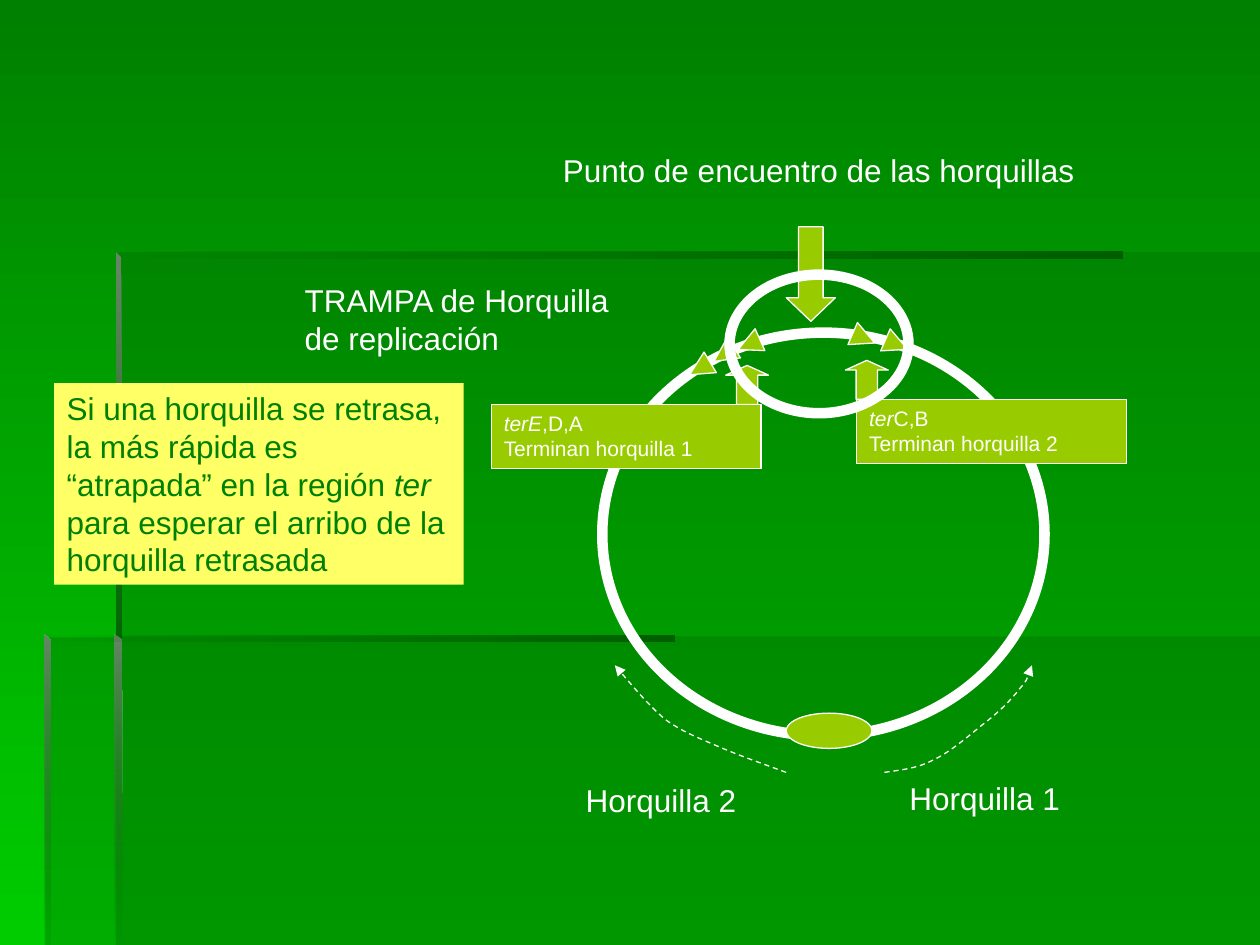
from lxml import etree
from pptx import Presentation
from pptx.dml.color import RGBColor
from pptx.enum.dml import MSO_LINE
from pptx.enum.shapes import MSO_SHAPE as Preset
from pptx.enum.text import MSO_ANCHOR, MSO_AUTO_SIZE as AutoSize, PP_ALIGN
from pptx.oxml.ns import qn
from pptx.util import Inches, Pt

DARK_GREEN = RGBColor(0x00, 0x80, 0x00)
BRIGHT_GREEN = RGBColor(0x00, 0xCC, 0x00)
PANEL = RGBColor(0x00, 0x66, 0x00)
PANEL_SHADE = RGBColor(0x00, 0x5E, 0x00)
PANEL_LIGHT = RGBColor(0x66, 0x86, 0x66)
LIME = RGBColor(0x99, 0xCC, 0x00)
YELLOW = RGBColor(0xFF, 0xFF, 0x66)
WHITE = RGBColor(0xFF, 0xFF, 0xFF)

prs = Presentation()
prs.slide_width, prs.slide_height = Inches(10), Inches(7.5)
slide = prs.slides.add_slide(prs.slide_layouts[6])
shapes = slide.shapes


def add_preset(preset, box, fill=LIME, line_width=0.75, rotation=0):
    shape = shapes.add_shape(preset, *map(Inches, box))
    shape.shadow.inherit = False
    shape.rotation = rotation
    if fill is None:
        shape.fill.background()
    else:
        shape.fill.solid()
        shape.fill.fore_color.rgb = fill
    if line_width:
        shape.line.color.rgb = WHITE
        shape.line.width = Pt(line_width)
    else:
        shape.line.fill.background()
    return shape


def write(shape, paragraphs, size=18, color=WHITE, wrap=True):
    """Each paragraph is a list of runs; a run starting with "ter" is italic."""
    frame = shape.text_frame
    frame_format = {"word_wrap": wrap, "auto_size": AutoSize.SHAPE_TO_FIT_TEXT,
                    "vertical_anchor": MSO_ANCHOR.TOP}
    for name, value in frame_format.items():
        setattr(frame, name, value)
    for index, runs in enumerate(paragraphs):
        paragraph = frame.add_paragraph() if index else frame.paragraphs[0]
        paragraph.alignment = PP_ALIGN.LEFT
        for text in runs:
            run = paragraph.add_run()
            run.text = text
            run_format = {"name": "Arial", "size": Pt(size), "italic": text.startswith("ter")}
            for name, value in run_format.items():
                setattr(run.font, name, value)
            run.font.color.rgb = color


# Background gradient, dark at the top
backdrop = slide.background.fill
backdrop.gradient()
backdrop.gradient_angle = 270
for stop, color in zip(backdrop.gradient_stops, (DARK_GREEN, BRIGHT_GREEN)):
    stop.color.rgb = color

# Translucent panels and their bevelled edges: outline, angle, (colour, opacity) stops
PANEL_FILL = [(PANEL, 30)]
ACROSS = [(PANEL, 0), (PANEL_SHADE, 100)]
decor = [
    ([(0.92, 5.05), (0.92, 7.5), (10, 7.5), (10, 5.05)], 0, PANEL_FILL),
    ([(0.94, 5.06), (0.36, 5.06), (0.36, 7.5), (10, 7.5), (10, 2), (0.94, 2)], 0, PANEL_FILL),
    ([(0.92, 2), (0.92, 2.05), (8.91, 2.05), (8.91, 2)], 0, ACROSS),
    ([(0.92, 2), (0.92, 5.1), (0.97, 5.1), (0.96, 2.04)], 270,
     [(PANEL_LIGHT, 100), (PANEL, 100)]),
    ([(0.91, 7.5), (0.97, 7.5), (0.96, 5.08), (0.91, 5.04)], 270,
     [(PANEL_LIGHT, 100), (PANEL, 0)]),
    ([(0.35, 5.04), (0.35, 5.09), (5.35, 5.09), (5.35, 5.04)], 0, ACROSS),
    ([(0.35, 5.04), (0.35, 7.5), (0.4, 7.5), (0.4, 5.09)], 270,
     [(PANEL_LIGHT, 100), (PANEL, 10)]),
]
for outline, angle, stops in decor:
    corners = [(Inches(x), Inches(y)) for x, y in outline]
    builder = shapes.build_freeform(*corners[0])
    builder.add_line_segments(corners[1:], close=True)
    panel = builder.convert_to_shape()
    panel.shadow.inherit = False
    panel.line.fill.background()
    if len(stops) == 1:
        panel.fill.solid()
        panel.fill.fore_color.rgb = stops[0][0]
    else:
        panel.fill.gradient()
        panel.fill.gradient_angle = angle
        for stop, (color, _) in zip(panel.fill.gradient_stops, stops):
            stop.color.rgb = color
    for tint, (_, opacity) in zip(panel._element.spPr.iter(qn("a:srgbClr")), stops):
        if opacity < 100:
            etree.SubElement(tint, qn("a:alpha"), val=str(opacity * 1000))

# Chromosome and replication origin
add_preset(Preset.OVAL, (4.78, 2.64, 3.51, 3.2), fill=None, line_width=6)
add_preset(Preset.OVAL, (6.24, 5.66, 0.68, 0.28))

# Dashed fork paths: start point, then two controls and an end per curve
fork_paths = [
    [(6.24, 6.13), (6.05, 6.06), (5.85, 5.99), (5.69, 5.92), (5.53, 5.85),
     (5.42, 5.81), (5.28, 5.71), (5.15, 5.6), (4.94, 5.35), (4.88, 5.28)],
    [(7.02, 6.13), (7.15, 6.11), (7.28, 6.1), (7.41, 6.03), (7.54, 5.97),
     (7.69, 5.84), (7.8, 5.75), (7.92, 5.66), (8.03, 5.55), (8.09, 5.47),
     (8.16, 5.39), (8.17, 5.33), (8.19, 5.28)],
]
for fork_path in fork_paths:
    points = [(Inches(x), Inches(y)) for x, y in fork_path]
    builder = shapes.build_freeform(*points[0])
    builder.add_line_segments(points[1:], close=False)
    fork = builder.convert_to_shape()
    fork.shadow.inherit = False
    fork.fill.background()
    fork.line.color.rgb = WHITE
    fork.line.width = Pt(0.75)
    fork.line.dash_style = MSO_LINE.DASH
    etree.SubElement(fork.line._get_or_add_ln(), qn("a:tailEnd"), type="triangle")
    # Join every three straight segments into one Bézier curve
    segments = list(fork._element.spPr.iter(qn("a:lnTo")))
    for first in range(0, len(segments), 3):
        curve = etree.Element(qn("a:cubicBezTo"))
        segments[first].addprevious(curve)
        for segment in segments[first:first + 3]:
            curve.append(segment[0])
            segment.getparent().remove(segment)

# Free labels
labels = [
    ("Horquilla 2", (4.55, 6.15, 1.4, 0.4), False),
    ("Horquilla 1", (7.12, 6.13, 1.4, 0.4), False),
    ("Punto de encuentro de las horquillas", (4.37, 1.15, 4.26, 0.4), False),
    ("TRAMPA de Horquilla de replicación", (2.32, 2.18, 2.91, 0.7), True),
]
for text, box, wrap in labels:
    write(shapes.add_textbox(*map(Inches, box)), [[text]], wrap=wrap)

# Ter sites along the chromosome
for left, top, rotation in [(5.85, 2.64, 245.9), (5.65, 2.72, 235.9), (5.46, 2.83, 239),
                            (6.76, 2.59, 113.2), (7.02, 2.64, 113.2)]:
    add_preset(Preset.ISOSCELES_TRIANGLE, (left, top, 0.19, 0.19), rotation=rotation)

# Ter boxes, each with its arrow
ter_sites = [
    ((6.71, 2.86), (6.8, 3.17), ["ter", "C,B"], "Terminan horquilla 2"),
    ((5.76, 2.9), (3.9, 3.21), ["terE", ",D,A"], "Terminan horquilla 1"),
]
for arrow_at, box_at, genes, effect in ter_sites:
    arrow = add_preset(Preset.UP_ARROW, (*arrow_at, 0.34, 0.31))
    arrow.adjustments[1] = 0.25
    write(add_preset(Preset.RECTANGLE, (*box_at, 2.14, 0.51)), [genes, [effect]], size=12)

# Meeting point and fork trap
meeting_arrow = add_preset(Preset.DOWN_ARROW, (6.24, 1.8, 0.39, 0.75))
meeting_arrow.adjustments[1] = 0.48
add_preset(Preset.OVAL, (5.79, 2.18, 1.42, 1.1), fill=None, line_width=6)

# Explanation
explanation = add_preset(Preset.RECTANGLE, (0.43, 3.04, 3.25, 1.6), fill=YELLOW, line_width=0)
write(explanation, [["Si una horquilla se retrasa, la más rápida es “atrapada” en la región ",
                     "ter", " para esperar el arribo de la horquilla retrasada"]],
      color=DARK_GREEN)

prs.save("out.pptx")
